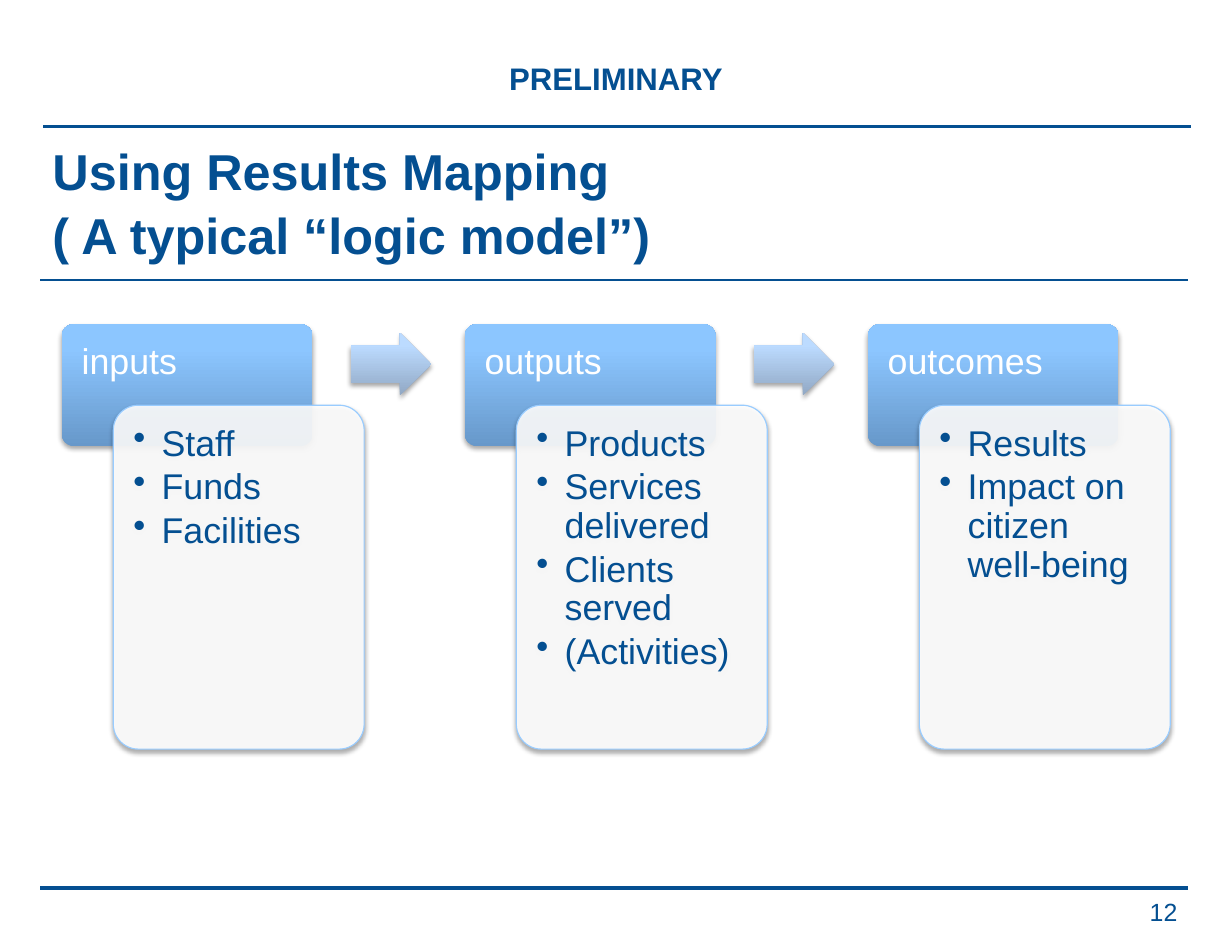
from dataclasses import dataclass

import lxml.etree
import pptx
import pptx.dml.color
import pptx.enum.shapes
import pptx.enum.text
import pptx.oxml
import pptx.oxml.ns
import pptx.util
from pptx.util import Cm, Pt

ALIGN = pptx.enum.text.PP_ALIGN
ANCHOR = pptx.enum.text.MSO_ANCHOR
SHAPE = pptx.enum.shapes.MSO_SHAPE


@dataclass(frozen=True)
class Theme:
    font: str = "Arial"
    navy: str = "044F91"
    white: str = "FFFFFF"
    card_line: str = "99CCFF"
    header_stops: tuple = ((0, "6798CA"), (80, "8CC6FF"), (100, "8EC7FF"))
    arrow_stops: tuple = ((0, "91A8C4"), (80, "BCDBFF"), (100, "BEDCFF"))
    banner_size: float = 20
    title_size: float = 32.4
    body_size: float = 23
    number_size: float = 16


THEME = Theme()
STAGES = [
    ("inputs", ["Staff", "Funds", "Facilities"]),
    ("outputs", ["Products", "Services delivered", "Clients served", "(Activities)"]),
    ("outcomes", ["Results", "Impact on citizen well-being"]),
]
STAGE_LEFT, STAGE_PITCH, STAGE_WIDTH = 1.4, 9.14, 5.69
HEADER_TOP, CARD_TOP, CARD_SHIFT = 7.35, 9.19, 1.17
ARROW_SHIFT, ARROW_TOP = 6.55, 7.55


def rgb(color):
    return pptx.dml.color.RGBColor.from_string(color)


def add_xml(parent, xml):
    namespace = pptx.oxml.ns.nsdecls("a")
    element = pptx.oxml.parse_xml(xml.replace(">", f" {namespace}>", 1))
    parent.append(element)
    return element


def style_paragraph(paragraph, size, color, bold=False):
    for run in paragraph.runs:
        run.font.name = THEME.font
        run.font.size = Pt(size)
        run.font.bold = bold
        run.font.color.rgb = rgb(color)


def set_margins(text_frame, horizontal, vertical):
    text_frame.margin_left = text_frame.margin_right = Cm(horizontal)
    text_frame.margin_top = text_frame.margin_bottom = Cm(vertical)


def add_label(slide, box, text, size, align, anchor=ANCHOR.MIDDLE, bold=True):
    label = slide.shapes.add_textbox(*map(Cm, box))
    text_frame = label.text_frame
    text_frame.word_wrap = True
    text_frame.vertical_anchor = anchor
    set_margins(text_frame, 0.28, 0.15)
    paragraph = text_frame.paragraphs[0]
    paragraph.text = text
    paragraph.alignment = align
    style_paragraph(paragraph, size, THEME.navy, bold)
    return paragraph


def add_rule(slide, left, top, width):
    rule = slide.shapes.add_connector(
        pptx.enum.shapes.MSO_CONNECTOR.STRAIGHT, Cm(left), Cm(top), Cm(left + 26.04), Cm(top))
    rule.line.color.rgb = rgb(THEME.navy)
    rule.line.width = Pt(width)
    add_xml(rule._element.spPr, "<a:effectLst></a:effectLst>")


def add_soft_shape(slide, kind, box, adjustments):
    shape = slide.shapes.add_shape(kind, *map(Cm, box))
    for index, value in enumerate(adjustments):
        shape.adjustments[index] = value
    shape.line.fill.background()
    return shape


def add_shadow(shape):
    add_xml(shape._element.spPr,
            f'<a:effectLst><a:outerShdw blurRad="{Pt(3.1)}" dist="{Pt(1.8)}" dir="5400000" '
            'rotWithShape="0"><a:srgbClr val="000000"><a:alpha val="35000"/></a:srgbClr>'
            '</a:outerShdw></a:effectLst>')


def fill_gradient(shape, stops):
    shape.fill.gradient()
    gradient = shape._element.spPr.find(pptx.oxml.ns.qn("a:gradFill"))
    for child in list(gradient):
        gradient.remove(child)
    marks = "".join(f'<a:gs pos="{position * 1000}"><a:srgbClr val="{color}"/></a:gs>'
                    for position, color in stops)
    add_xml(gradient, f"<a:gsLst>{marks}</a:gsLst>")
    add_xml(gradient, '<a:lin ang="16200000" scaled="0"></a:lin>')


def write_lines(shape, lines, color, margins, bulleted=False):
    text_frame = shape.text_frame
    text_frame.word_wrap = True
    text_frame.vertical_anchor = ANCHOR.TOP
    set_margins(text_frame, *margins)
    text_frame.text = "\n".join(lines)
    for paragraph in text_frame.paragraphs:
        paragraph.alignment = ALIGN.LEFT
        paragraph.line_spacing = 0.9
        if bulleted:
            paragraph.space_after = Pt(3.2)
            properties = paragraph._p.get_or_add_pPr()
            properties.set("marL", str(Cm(0.64)))
            properties.set("indent", str(-Cm(0.64)))
            add_xml(properties, '<a:buChar char="•"></a:buChar>')
        style_paragraph(paragraph, THEME.body_size, color)


def add_header(slide, left, name):
    header = add_soft_shape(slide, SHAPE.ROUNDED_RECTANGLE,
                            (left, HEADER_TOP, STAGE_WIDTH, 2.77), [0.1])
    fill_gradient(header, THEME.header_stops)
    add_shadow(header)
    write_lines(header, [name], THEME.white, (0.37, 0.37))


def add_card(slide, left, items):
    card = add_soft_shape(slide, SHAPE.ROUNDED_RECTANGLE,
                          (left + CARD_SHIFT, CARD_TOP, STAGE_WIDTH, 7.8), [0.1])
    card.fill.solid()
    card.fill.fore_color.rgb = rgb(THEME.white)
    color = card._element.spPr.find(".//" + pptx.oxml.ns.qn("a:srgbClr"))
    add_xml(color, '<a:alpha val="90000"></a:alpha>')
    card.line.color.rgb = rgb(THEME.card_line)
    card.line.width = Pt(0.75)
    add_shadow(card)
    write_lines(card, items, THEME.navy, (0.29, 0.29), bulleted=True)


def add_arrow(slide, left):
    arrow = add_soft_shape(slide, SHAPE.RIGHT_ARROW,
                           (left + ARROW_SHIFT, ARROW_TOP, 1.83, 1.42), [0.6, 0.5])
    fill_gradient(arrow, THEME.arrow_stops)
    add_shadow(arrow)


def main():
    presentation = pptx.Presentation()
    presentation.slide_width = Cm(27.94)
    presentation.slide_height = Cm(21.59)
    slide = presentation.slides.add_slide(presentation.slide_layouts[6])

    add_label(slide, (0, 1.19, 27.94, 1.14), "PRELIMINARY",
              THEME.banner_size, ALIGN.CENTER, ANCHOR.TOP)
    add_rule(slide, 0.98, 2.87, 2.5)
    add_rule(slide, 0.91, 20.14, 2.5)
    add_rule(slide, 0.91, 6.35, 1.5)
    title = add_label(slide, (0.91, 3.12, 26.04, 2.87),
                      "Using Results Mapping\n( A typical “logic model”)",
                      THEME.title_size, ALIGN.LEFT)
    title.line_spacing = 1.05

    for index, (name, items) in enumerate(STAGES):
        left = STAGE_LEFT + index * STAGE_PITCH
        add_header(slide, left, name)
        add_card(slide, left, items)
        if index < len(STAGES) - 1:
            add_arrow(slide, left)

    add_label(slide, (20.45, 20.17, 6.53, 0.99), "12",
              THEME.number_size, ALIGN.RIGHT, bold=False)
    presentation.save("out.pptx")


if __name__ == "__main__":
    main()
